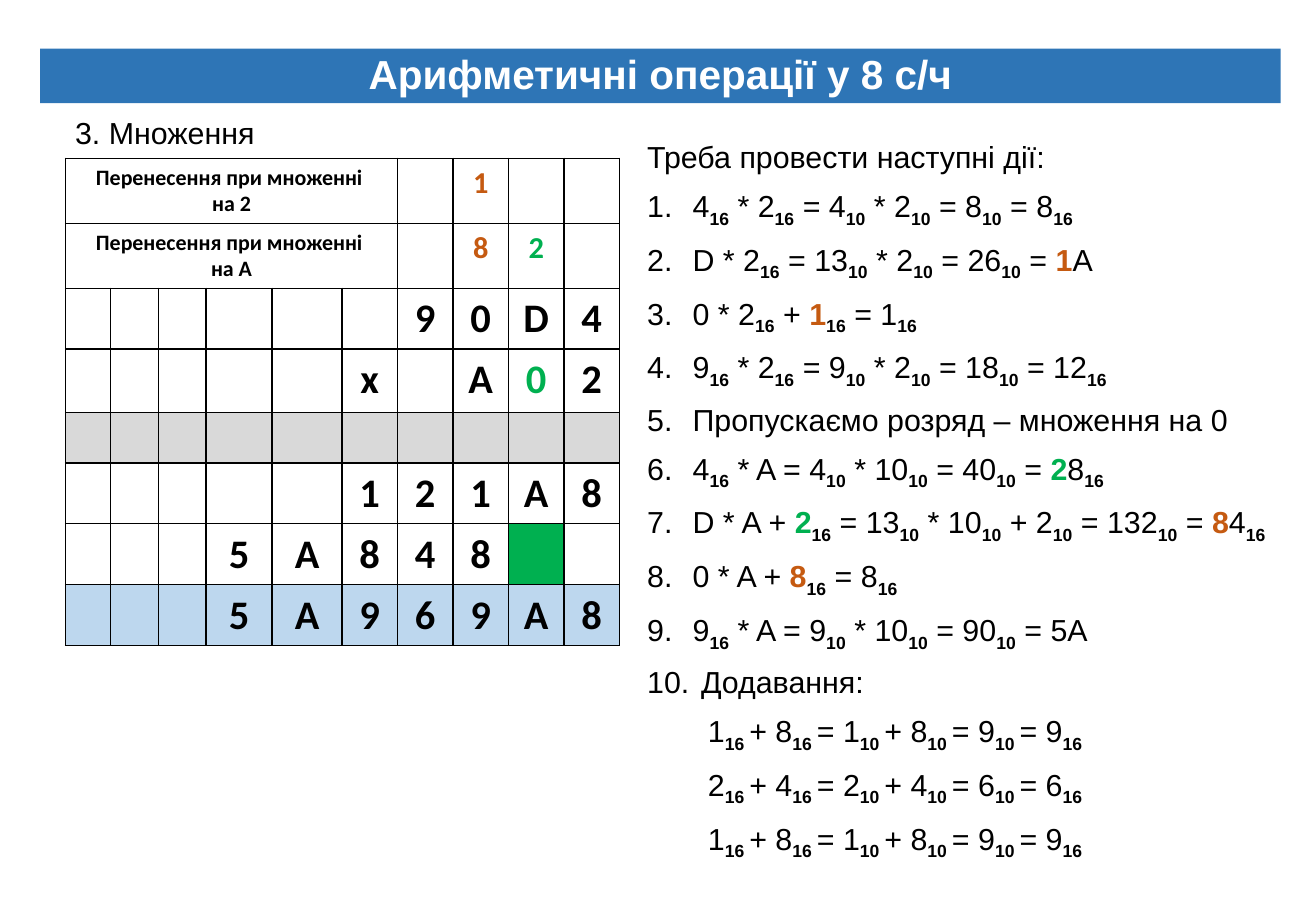
from lxml.etree import SubElement
from pptx import Presentation
from pptx.dml.color import RGBColor
from pptx.enum.shapes import MSO_SHAPE
from pptx.enum.text import MSO_ANCHOR, PP_ALIGN
from pptx.oxml.ns import qn
from pptx.util import Cm, Pt

BLACK, ORANGE, GREEN = "000000", "C55A11", "00B050"
COLS = [0.94, 1, 1, 1.38, 1.46] + [1.16] * 5
ROWS = [1.36, 1.36, 1.26, 1.32, 1.06] + [1.27] * 3
LABELS = ["Перенесення при множенні \vна 2", "Перенесення при множенні \vна A"]
# A dot is an empty cell.
GRID = [
    ".......1..",
    ".......82.",
    "......90D4",
    ".....х.A02",
    "..........",
    ".....121A8",
    "...5A848..",
    "...5A969A8",
]
INKS = {(0, 7): ORANGE, (1, 7): ORANGE, (1, 8): GREEN, (3, 8): GREEN}
BANDS = {4: "D9D9D9", 7: "BDD7EE"}

# Pieces are split by |; the first sign marks _ subscript, ^ orange, ~ green.
INTRO = "Треба провести наступні дії:"
STEPS = [
    "4|_16| * 2|_16| = 4|_10| * 2|_10| = 8|_10| = 8|_16",
    "D * 2|_16| = 13|_10| * 2|_10| = 26|_10| = |^1|A",
    "0 * 2|_16| + |^1|_16| = 1|_16",
    "9|_16| * 2|_16| = 9|_10| * 2|_10| = 18|_10| = 12|_16",
    "Пропускаємо розряд – множення на 0",
    "4|_16| * A = 4|_10| * 10|_10| = 40|_10| = |~2|8|_16",
    "D * A + |~2|_16| = 13|_10| * 10|_10| + 2|_10| = 132|_10| = |^8|4|_16",
    "0 * A + |^8|_16| = 8|_16",
    "9|_16| * A = 9|_10| * 10|_10| = 90|_10| = 5A",
    " Додавання:",
]
SUMS = [(1, 8, 9), (2, 4, 6), (1, 8, 9)]


def color(code):
    return RGBColor.from_string(code)


def style(run, size, ink=BLACK, bold=False, face="Arial"):
    font = run.font
    font.name, font.size, font.bold = face, Pt(size), bold
    font.color.rgb = color(ink)


def add_title(slide, text):
    bar = slide.shapes.add_shape(
        MSO_SHAPE.RECTANGLE, Cm(0.84), Cm(1.02), Cm(25.93), Cm(1.14))
    bar.shadow.inherit = False
    bar.fill.solid()
    bar.fill.fore_color.rgb = color("2E75B6")
    bar.line.fill.background()
    frame = bar.text_frame
    frame.margin_left = frame.margin_right = Cm(0.2)
    frame.margin_top = frame.margin_bottom = Cm(0.1)
    frame.vertical_anchor = MSO_ANCHOR.BOTTOM
    frame.text = text
    para = frame.paragraphs[0]
    para.alignment, para.line_spacing = PP_ALIGN.CENTER, 0.9
    style(para.runs[0], 24, "FFFFFF", True)


def add_box(slide, left, top, width, height):
    box = slide.shapes.add_textbox(Cm(left), Cm(top), Cm(width), Cm(height))
    box.text_frame.word_wrap = True
    return box.text_frame


def add_head(slide, text):
    frame = add_box(slide, 1.32, 2.26, 5, 1.02)
    frame.text = text
    style(frame.paragraphs[0].runs[0], 18)


def frame_cell(cell):
    """Draw a thin black border on all four sides."""
    props = cell._tc.get_or_add_tcPr()
    for side in ("a:lnL", "a:lnR", "a:lnT", "a:lnB"):
        line = SubElement(props, qn(side), w=str(Pt(1)))
        fill = SubElement(line, qn("a:solidFill"))
        SubElement(fill, qn("a:srgbClr"), val=BLACK)


def paint(cell, code):
    if code:
        cell.fill.solid()
        cell.fill.fore_color.rgb = color(code)
    else:
        cell.fill.background()


def write(cell, text, size, ink=BLACK):
    cell.text_frame.text = text
    para = cell.text_frame.paragraphs[0]
    para.alignment = PP_ALIGN.CENTER
    for run in para.runs:
        style(run, size, ink, True, "Calibri")


def add_grid(slide):
    table = slide.shapes.add_table(
        len(ROWS), len(COLS), Cm(1.37), Cm(3.31),
        Cm(sum(COLS)), Cm(sum(ROWS))).table
    table.first_row = table.horz_banding = False
    for col, width in zip(table.columns, COLS):
        col.width = Cm(width)
    for row, height in zip(table.rows, ROWS):
        row.height = Cm(height)
    for r, marks in enumerate(GRID):
        for c, mark in enumerate(marks):
            cell = table.cell(r, c)
            frame_cell(cell)
            paint(cell, GREEN if (r, c) == (6, 8) else BANDS.get(r))
            if mark != ".":
                size = 18 if r < len(LABELS) else 24
                write(cell, mark, size, INKS.get((r, c), BLACK))
    for r, label in enumerate(LABELS):
        table.cell(r, 0).merge(table.cell(r, 5))
        write(table.cell(r, 0), label, 13)


def add_line(para, text):
    """Fill a paragraph from marked-up pieces."""
    para.line_spacing = 1.3
    for piece in text.split("|"):
        mark = piece[0] if piece[0] in "_^~" else ""
        run = para.add_run()
        run.text = piece[len(mark):]
        style(run, 18, {"^": ORANGE, "~": GREEN}.get(mark, BLACK), bool(mark))
        if mark == "_":
            run._r.get_or_add_rPr().set("baseline", "-25000")


def indent(para, left, first=0):
    props = para._p.get_or_add_pPr()
    props.set("marL", str(Cm(left)))
    props.set("indent", str(Cm(first)))
    return props


def add_steps(slide):
    frame = add_box(slide, 13.28, 2.54, 13.92, 14.25)
    add_line(frame.paragraphs[0], INTRO)
    for step in STEPS:
        para = frame.add_paragraph()
        props = indent(para, 0.95, -0.95)
        SubElement(props, qn("a:buFont"), typeface="+mj-lt")
        SubElement(props, qn("a:buAutoNum"), type="arabicPeriod")
        add_line(para, step)
    for a, b, total in SUMS:
        para = frame.add_paragraph()
        indent(para, 1.27)
        add_line(para, f"{a}|_16 |+ {b}|_16 |= {a}|_10 |+ {b}|_10 "
                       f"|= {total}|_10 |= {total}|_16")


def main():
    deck = Presentation()
    deck.slide_width, deck.slide_height = Cm(27.51), Cm(19.05)
    slide = deck.slides.add_slide(deck.slide_layouts[6])
    add_title(slide, "Арифметичні операції у 8 с/ч")
    add_head(slide, "3. Множення")
    add_grid(slide)
    add_steps(slide)
    deck.save("out.pptx")


if __name__ == "__main__":
    main()
